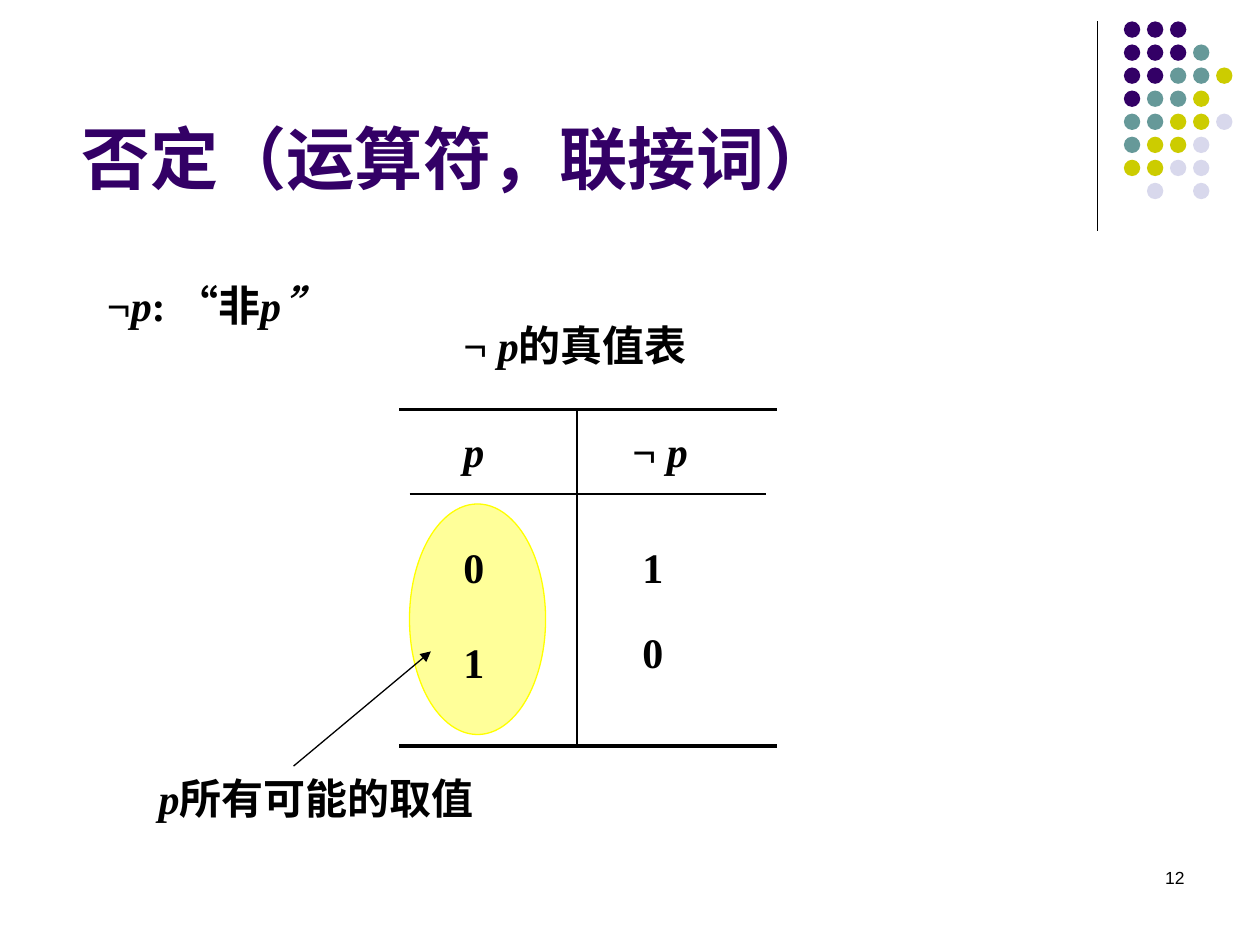
import pptx
import pptx.util
import pptx.dml.color
import pptx.enum.shapes
import pptx.enum.text
import pptx.oxml.ns
from lxml import etree

Inches, Pt = pptx.util.Inches, pptx.util.Pt
RGB = pptx.dml.color.RGBColor
qn = pptx.oxml.ns.qn
ALIGN = pptx.enum.text.PP_ALIGN
OVAL = pptx.enum.shapes.MSO_SHAPE.OVAL
STRAIGHT = pptx.enum.shapes.MSO_CONNECTOR.STRAIGHT

BLACK = RGB(0, 0, 0)
PURPLE = RGB(0x33, 0, 0x66)
TEAL = RGB(0x66, 0x99, 0x99)
OLIVE = RGB(0xCC, 0xCC, 0)
LILAC = RGB(0xD8, 0xD8, 0xEC)
CREAM = RGB(0xFF, 0xFF, 0x99)
YELLOW = RGB(0xFF, 0xFF, 0)
SERIF, SANS, HAN = "Times New Roman", "Arial", "Noto Sans CJK SC"

# Content
TITLE = "否定（运算符，联接词）"
NUMBER = "12"
HUES = {"P": PURPLE, "T": TEAL, "O": OLIVE, "L": LILAC}
DOTS = ["PPP", "PPPT", "PPTTO", "PTTO", "TTOOL", "TOOL", "OOLL", ".L.L"]

# Text boxes: left, top, width, then runs of (text, italic)
TEXTS = [
    (0.75, 2.17, 5.17, [("¬", False), ("p", True), (": “非", False), ("p”", True)]),
    (3.58, 3.33, 0.75, [("p", True)]),
    (4.92, 3.33, 1.25, [("¬ ", False), ("p", True)]),
    (3.58, 4.25, 0.75, [("0", False)]),
    (3.58, 5, 1, [("1", False)]),
    (5, 4.25, 1, [("1", False)]),
    (5, 4.92, 0.75, [("0", False)]),
    (3.58, 2.49, 3.16, [("¬ ", False), ("p", True), ("的真值表", False)]),
    (1.16, 6.08, 3.42, [("p", True), ("所有可能的取值", False)]),
]

# Lines: x1, y1, x2, y2, width in points
SIDE = (8.71, 0.17, 8.71, 1.83, 0.75)
RULES = [
    (3.17, 3.25, 6.17, 3.25, 2.25),
    (3.17, 5.92, 6.17, 5.92, 2.25),
    (4.58, 3.25, 4.58, 5.92, 0.75),
    (3.25, 3.92, 6.08, 3.92, 0.75),
]
ARROW = (2.33, 6.08, 3.42, 5.17, 0.75)

deck = pptx.Presentation()
deck.slide_width, deck.slide_height = Inches(10), Inches(7.5)
slide = deck.slides.add_slide(deck.slide_layouts[5])
shapes = slide.shapes


def style(run, size, face, color, bold=False, italic=False):
    font = run.font
    font.size, font.bold, font.italic = Pt(size), bold, italic
    font.color.rgb = color
    font.name = face
    east = etree.SubElement(run._r.get_or_add_rPr(), qn("a:ea"))
    east.set("typeface", HAN)


def add_line(x1, y1, x2, y2, width):
    line = shapes.add_connector(STRAIGHT, Inches(x1), Inches(y1), Inches(x2), Inches(y2))
    line.line.color.rgb = BLACK
    line.line.width = Pt(width)
    etree.SubElement(line._element.spPr, qn("a:effectLst"))
    return line


def add_oval(x, y, w, h, fill, edge=None):
    oval = shapes.add_shape(OVAL, Inches(x), Inches(y), Inches(w), Inches(h))
    oval.shadow.inherit = False
    oval.fill.solid()
    oval.fill.fore_color.rgb = fill
    if edge is None:
        oval.line.fill.background()
    else:
        oval.line.color.rgb = edge
        oval.line.width = Pt(0.75)


def add_text(x, y, w):
    box = shapes.add_textbox(Inches(x), Inches(y), Inches(w), Inches(0.5))
    box.text_frame.word_wrap = True
    return box.text_frame.paragraphs[0]


# Corner ornament
add_line(*SIDE)
for row, marks in enumerate(DOTS):
    for col, mark in enumerate(marks):
        if mark in HUES:
            add_oval(8.92 + col * 0.183, 0.17 + row * 0.183, 0.13, 0.13, HUES[mark])

# Title
title = shapes.title
title.left, title.top = Inches(0.55), Inches(0.79)
title.width, title.height = Inches(9.45), Inches(0.83)
frame = title.text_frame
frame.text = TITLE
frame.auto_size = pptx.enum.text.MSO_AUTO_SIZE.NONE
frame.vertical_anchor = pptx.enum.text.MSO_ANCHOR.BOTTOM
frame.paragraphs[0].alignment = ALIGN.JUSTIFY
style(frame.paragraphs[0].runs[0], 39, SANS, PURPLE, bold=True)

# Truth table with its highlight and captions
add_oval(3.25, 4, 1.08, 1.83, CREAM, YELLOW)
for rule in RULES:
    add_line(*rule)
for x, y, w, runs in TEXTS:
    para = add_text(x, y, w)
    para.space_before = Pt(2)
    for words, italic in runs:
        run = para.add_run()
        run.text = words
        style(run, 24, SERIF, BLACK, bold=True, italic=italic)

# Arrow to the possible values
arrow = add_line(*ARROW)
etree.SubElement(arrow.line._get_or_add_ln(), qn("a:tailEnd")).set("type", "triangle")

# Slide number
para = add_text(7.17, 6.83, 2.33)
para.text = NUMBER
para.alignment = ALIGN.RIGHT
style(para.runs[0], 10, SANS, BLACK)

deck.save("out.pptx")
